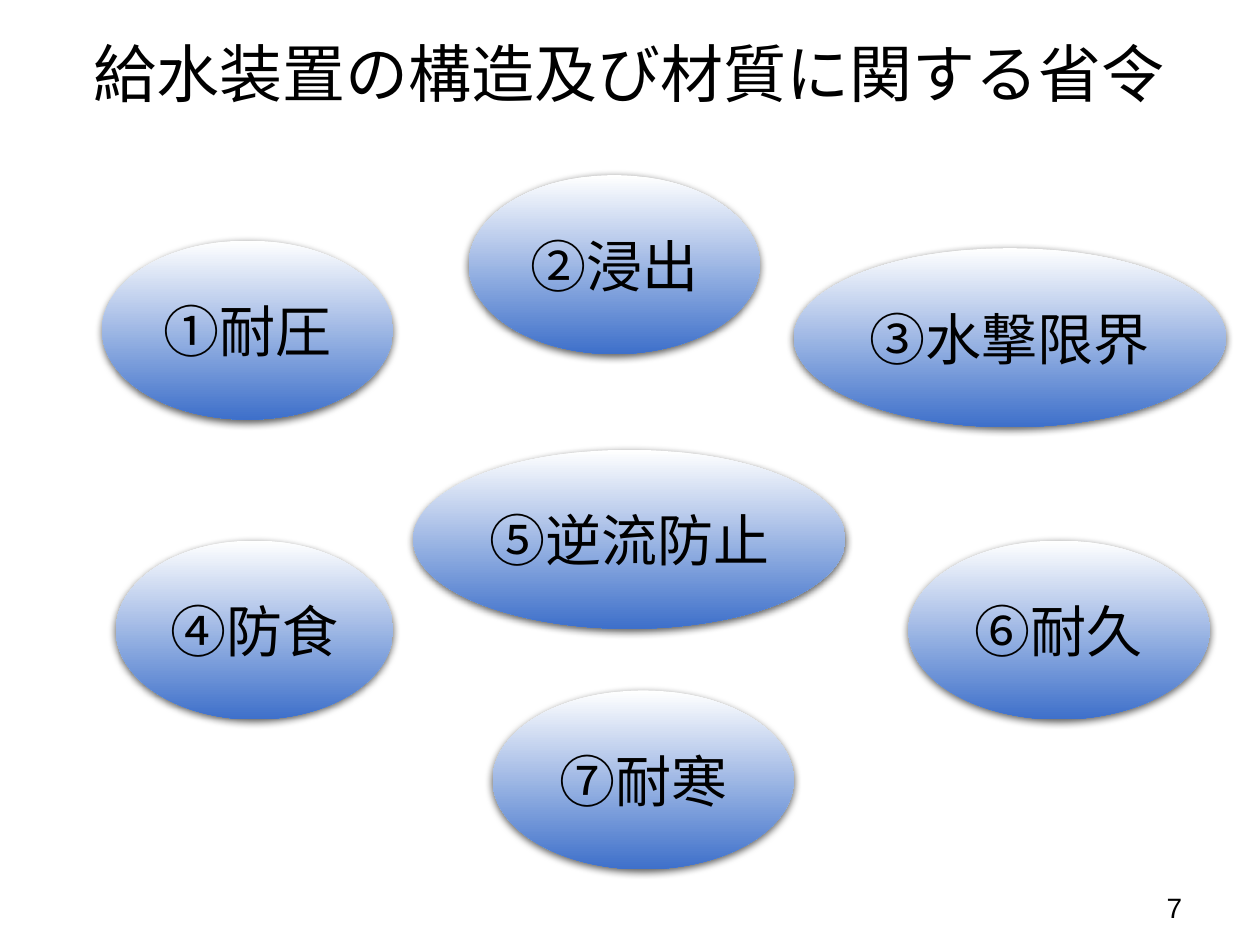
from lxml.etree import SubElement
from pptx import Presentation
from pptx.dml.color import RGBColor
from pptx.enum.shapes import MSO_SHAPE
from pptx.enum.text import MSO_ANCHOR, MSO_AUTO_SIZE, PP_ALIGN
from pptx.oxml.ns import qn
from pptx.util import Inches, Pt

BLACK = RGBColor(0x00, 0x00, 0x00)
WHITE = RGBColor(0xFF, 0xFF, 0xFF)
BLUE = RGBColor(0x3E, 0x70, 0xCA)

BUBBLE_HEIGHT = 1.42
BUBBLES = [
    ("①耐圧", 0.81, 1.91, 2.31),
    ("②浸出", 3.72, 1.39, 2.31),
    ("③水撃限界", 6.3, 1.97, 3.43),
    ("④防食", 0.92, 4.29, 2.2),
    ("⑤逆流防止", 3.28, 3.57, 3.43),
    ("⑦耐寒", 3.91, 5.48, 2.39),
    ("⑥耐久", 7.21, 4.29, 2.39),
]


def write_text(frame, text, size, font="Arial", color=BLACK,
               align=PP_ALIGN.CENTER, anchor=MSO_ANCHOR.MIDDLE, wrap=True):
    frame.word_wrap = wrap
    frame.auto_size = MSO_AUTO_SIZE.NONE
    frame.vertical_anchor = anchor
    para = frame.paragraphs[0]
    para.alignment = align
    span = para.add_run()
    span.text = text
    span.font.name = font
    span.font.size = Pt(size)
    span.font.color.rgb = color


def add_soft_shadow(shape):
    shape.shadow.inherit = False
    effects = shape._element.spPr.find(qn("a:effectLst"))
    shadow = SubElement(effects, qn("a:outerShdw"), blurRad=str(Pt(4.5)),
                        dist=str(Pt(1.5)), dir="5400000", rotWithShape="0")
    color = SubElement(shadow, qn("a:srgbClr"), val=str(BLACK))
    SubElement(color, qn("a:alpha"), val="63000")


class SlideBuilder:
    title_size = 36
    bubble_size = 32
    number_size = 16

    def __init__(self, deck):
        self.page = deck.slides.add_slide(deck.slide_layouts[5])

    def title(self, text, left, top, width, height):
        box = self.page.shapes.title
        box.left, box.top = Inches(left), Inches(top)
        box.width, box.height = Inches(width), Inches(height)
        write_text(box.text_frame, text, self.title_size, anchor=MSO_ANCHOR.TOP)

    def bubble(self, text, left, top, width, height=BUBBLE_HEIGHT):
        oval = self.page.shapes.add_shape(
            MSO_SHAPE.OVAL, Inches(left), Inches(top), Inches(width), Inches(height))
        oval.fill.gradient()
        oval.fill.gradient_angle = 270
        for stop, position, color in zip(oval.fill.gradient_stops, (0, 1), (WHITE, BLUE)):
            stop.position = position
            stop.color.rgb = color
        oval.line.fill.background()
        add_soft_shadow(oval)
        write_text(oval.text_frame, text, self.bubble_size, wrap=False)

    def page_number(self, text, left, top, width, height):
        box = self.page.shapes.add_textbox(
            Inches(left), Inches(top), Inches(width), Inches(height))
        write_text(box.text_frame, text, self.number_size, align=PP_ALIGN.RIGHT)


def main():
    deck = Presentation()
    deck.slide_width, deck.slide_height = Inches(10), Inches(7.5)
    builder = SlideBuilder(deck)
    for text, left, top, width in BUBBLES:
        builder.bubble(text, left, top, width)
    builder.title("給水装置の構造及び材質に関する省令", 0.27, 0.22, 9.45, 0.71)
    builder.page_number("7", 7.23, 7, 2.25, 0.4)
    deck.save("out.pptx")


if __name__ == "__main__":
    main()
